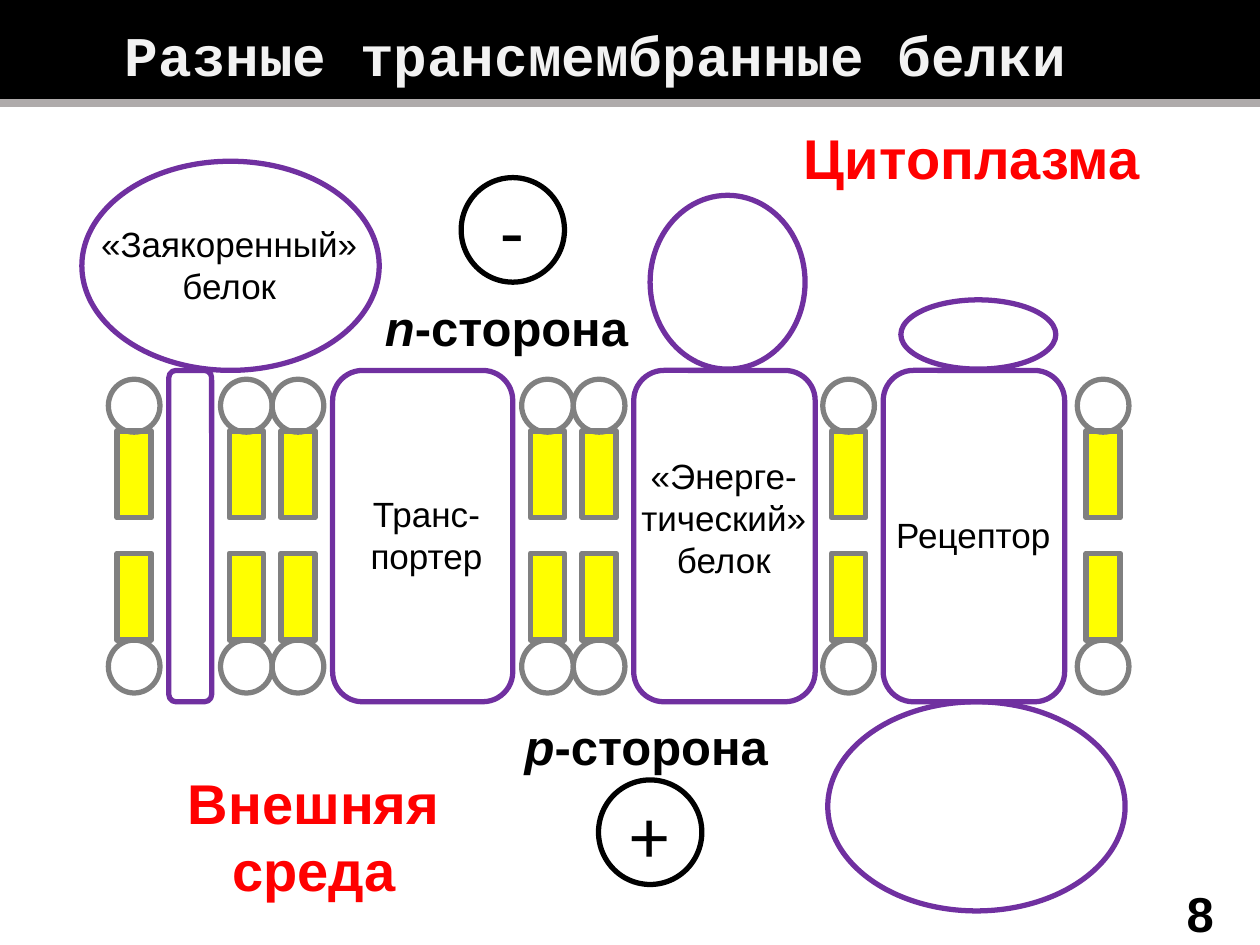
from dataclasses import dataclass
from typing import Optional

import pptx
import pptx.util
import pptx.dml.color
import pptx.enum.shapes
import pptx.enum.text
import pptx.oxml
import pptx.oxml.ns

Inches = pptx.util.Inches
Pt = pptx.util.Pt
Color = pptx.dml.color.RGBColor.from_string
Kind = pptx.enum.shapes.MSO_SHAPE
Align = pptx.enum.text.PP_ALIGN
Anchor = pptx.enum.text.MSO_ANCHOR
AutoSize = pptx.enum.text.MSO_AUTO_SIZE


@dataclass(frozen=True)
class Theme:
    black: str = "000000"
    title: str = "F2F2F2"
    rule: str = "AFABAB"
    lipid: str = "808080"
    tail: str = "FFFF00"
    protein: str = "7030A0"
    region: str = "FF0000"
    body_font: str = "Arial"
    title_font: str = "Courier New"
    charge_font: str = "Calibri"
    outline: float = 3
    rule_width: float = 4.75
    region_size: int = 32
    side_size: int = 28
    label_size: int = 20
    charge_size: int = 44


@dataclass(frozen=True)
class Frame:
    left: float
    top: float
    width: float
    height: float

    def lengths(self) -> tuple:
        return tuple(Inches(v) for v in (self.left, self.top, self.width, self.height))


@dataclass(frozen=True)
class Style:
    size: int
    color: str
    font: str
    bold: bool = False


@dataclass(frozen=True)
class Label:
    frame: Frame
    lines: tuple
    style: Style
    italic_start: str = ""


THEME = Theme()
TITLE = Style(THEME.region_size, THEME.title, THEME.title_font, True)
REGION = Style(THEME.region_size, THEME.region, THEME.body_font, True)
SIDE = Style(THEME.side_size, THEME.black, THEME.body_font, True)
NAME = Style(THEME.label_size, THEME.black, THEME.body_font)
CHARGE = Style(THEME.charge_size, THEME.black, THEME.charge_font)

MEMBRANE_TOP, MEMBRANE_HEIGHT = 2.94, 2.63
LIPID_LEFTS = (0.86, 1.75, 2.16, 4.14, 4.55, 6.53, 8.55)
LEAFLETS = ((3.01, 3.42), (5.08, 4.39))
PROTEIN_CORES = ((1.34, 0.34), (2.64, 1.43), (5.03, 1.44), (7.01, 1.44))
PROTEIN_DOMAINS = (
    Frame(0.65, 1.28, 2.36, 1.66),
    Frame(5.16, 1.55, 1.23, 1.38),
    Frame(7.15, 2.38, 1.23, 0.55),
    Frame(6.57, 5.57, 2.36, 1.66),
)
CHARGES = (("-", Frame(3.66, 1.41, 0.82, 0.83)), ("+", Frame(4.75, 6.19, 0.82, 0.83)))
LABELS = (
    Label(Frame(1.2, 6.05, 2.58, 1.18), ("Внешняя среда",), REGION),
    Label(Frame(6.05, 0.93, 3.33, 0.64), ("Цитоплазма",), REGION),
    Label(Frame(0.52, 1.72, 2.6, 0.8), ("«Заякоренный» белок",), NAME),
    Label(Frame(2.67, 3.86, 1.43, 0.8), ("Транс-портер",), NAME),
    Label(Frame(6.94, 4.03, 1.57, 0.44), ("Рецептор",), NAME),
    Label(Frame(4.96, 3.56, 1.57, 1.11), ("«Энерге-тический»", "белок"), NAME),
    Label(Frame(3.73, 5.64, 2.8, 0.57), ("-сторона",), SIDE, "p"),
    Label(Frame(2.84, 2.31, 2.36, 0.57), ("-сторона",), SIDE, "n"),
    Label(Frame(9.13, 6.96, 0.79, 0.54), ("8",), SIDE),
)


def format_para(para, style: Style) -> None:
    para.alignment = Align.CENTER
    para.font.size = Pt(style.size)
    para.font.name = style.font
    para.font.bold = style.bold
    para.font.color.rgb = Color(style.color)


def draw_shape(page, kind, frame: Frame, line: Optional[str], fill: Optional[str] = None):
    shape = page.shapes.add_shape(kind, *frame.lengths())
    shape.shadow.inherit = False
    if fill:
        shape.fill.solid()
        shape.fill.fore_color.rgb = Color(fill)
    else:
        shape.fill.background()
    if line:
        shape.line.color.rgb = Color(line)
        shape.line.width = Pt(THEME.outline)
    else:
        shape.line.fill.background()
    return shape


def draw_header(page) -> None:
    title = page.shapes.title
    title.left, title.top, title.width, title.height = Frame(0.23, 0.13, 9, 0.56).lengths()
    text = title.text_frame
    text.text = "Разные трансмембранные белки"
    text.auto_size = AutoSize.NONE
    text.vertical_anchor = Anchor.MIDDLE
    text.margin_left = text.margin_right = text.margin_bottom = 0
    text.margin_top = Inches(0.04)
    format_para(text.paragraphs[0], TITLE)
    band = draw_shape(page, Kind.RECTANGLE, Frame(0, 0, 10, 0.81), None, THEME.black)
    title.element.addprevious(band.element)


def draw_rule(page) -> None:
    rule = page.shapes.add_connector(
        pptx.enum.shapes.MSO_CONNECTOR.STRAIGHT, Inches(10), Inches(0.82), 0, Inches(0.82))
    rule.line.color.rgb = Color(THEME.rule)
    rule.line.width = Pt(THEME.rule_width)
    properties = rule.element.find(pptx.oxml.ns.qn("p:spPr"))
    properties.append(pptx.oxml.parse_xml(
        f"<a:effectLst {pptx.oxml.ns.nsdecls('a')}/>"))


def draw_lipids(page, left: float) -> None:
    for head_top, tail_top in LEAFLETS:
        draw_shape(page, Kind.RECTANGLE, Frame(left + 0.07, tail_top, 0.27, 0.69),
                   THEME.lipid, THEME.tail)
        draw_shape(page, Kind.OVAL, Frame(left, head_top, 0.41, 0.42), THEME.lipid)


def draw_charge(page, sign: str, frame: Frame) -> None:
    circle = draw_shape(page, Kind.OVAL, frame, THEME.black)
    circle.text_frame.text = sign
    circle.text_frame.vertical_anchor = Anchor.MIDDLE
    format_para(circle.text_frame.paragraphs[0], CHARGE)


def draw_label(page, label: Label) -> None:
    text = page.shapes.add_textbox(*label.frame.lengths()).text_frame
    text.word_wrap = True
    text.auto_size = AutoSize.SHAPE_TO_FIT_TEXT
    for index, line in enumerate(label.lines):
        para = text.add_paragraph() if index else text.paragraphs[0]
        if label.italic_start:
            span = para.add_run()
            span.text = label.italic_start
            span.font.italic = True
        para.add_run().text = line
        format_para(para, label.style)


def main() -> None:
    deck = pptx.Presentation()
    deck.slide_width, deck.slide_height = Inches(10), Inches(7.5)
    page = deck.slides.add_slide(deck.slide_layouts[5])
    draw_header(page)
    for left in LIPID_LEFTS:
        draw_lipids(page, left)
    for left, width in PROTEIN_CORES:
        draw_shape(page, Kind.ROUNDED_RECTANGLE,
                   Frame(left, MEMBRANE_TOP, width, MEMBRANE_HEIGHT), THEME.protein)
    for frame in PROTEIN_DOMAINS:
        draw_shape(page, Kind.OVAL, frame, THEME.protein)
    for sign, frame in CHARGES:
        draw_charge(page, sign, frame)
    for label in LABELS:
        draw_label(page, label)
    draw_rule(page)
    deck.save("out.pptx")


if __name__ == "__main__":
    main()
